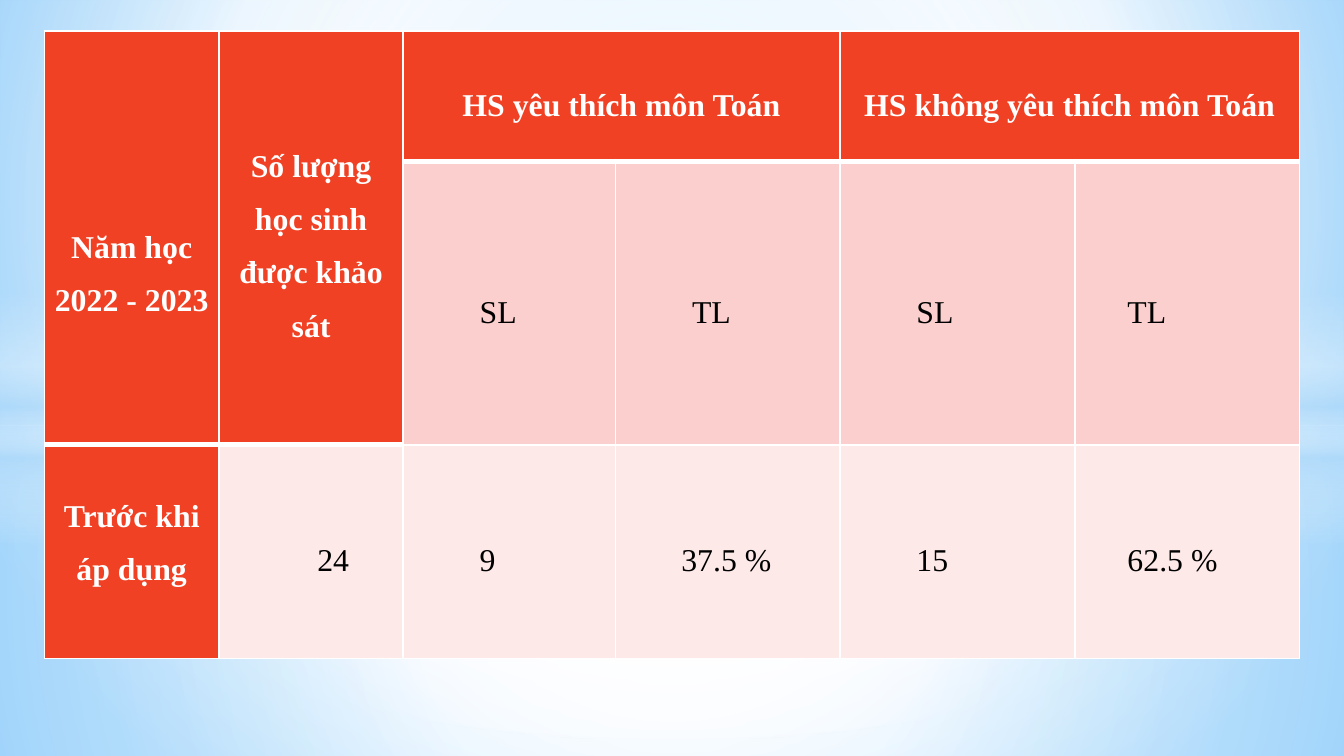
from dataclasses import dataclass

from pptx import Presentation
from pptx.dml.color import RGBColor
from pptx.enum.shapes import MSO_SHAPE
from pptx.enum.text import MSO_ANCHOR, PP_ALIGN
from pptx.oxml import parse_xml
from pptx.oxml.ns import nsdecls, qn
from pptx.util import Inches, Pt


@dataclass(frozen=True)
class Theme:
    font: str = "Times New Roman"
    size: float = 17
    line_spacing: float = 1.5
    header: str = "F14124"
    subheader: str = "FACFCD"
    body: str = "FCE9E8"
    white: str = "FFFFFF"
    black: str = "000000"
    sky: str = "9ED5FF"
    deep_sky: str = "5BB9FF"
    mist: str = "B4DCFA"
    thin: float = 1
    thick: float = 3


@dataclass(frozen=True)
class CellText:
    lines: tuple
    align: PP_ALIGN = PP_ALIGN.JUSTIFY
    indent: float = 0
    top: float = 0.01
    anchor: MSO_ANCHOR = MSO_ANCHOR.MIDDLE
    span: tuple = (1, 1)


THEME = Theme()
CENTER = PP_ALIGN.CENTER
WIDTH = 10
HEIGHT = WIDTH * 9 / 16

COLUMNS = (1.3, 1.37, 1.58, 1.67, 1.75, 1.67)
ROWS = (0.97, 2.11, 1.59)
CELLS = {
    (0, 0): CellText(("Năm học", "2022 - 2023"), CENTER, top=0.41, span=(2, 1)),
    (0, 1): CellText(("Số lượng học sinh được khảo sát",), CENTER, top=0, span=(2, 1)),
    (0, 2): CellText(("HS yêu thích môn Toán",), CENTER, span=(1, 2)),
    (0, 4): CellText(("HS không yêu thích môn Toán",), CENTER, span=(1, 2)),
    (1, 2): CellText(("SL",), indent=0.5),
    (1, 3): CellText(("TL",), indent=0.5),
    (1, 4): CellText(("SL",), indent=0.5),
    (1, 5): CellText(("TL",), indent=0.32),
    (2, 0): CellText(("Trước khi áp dụng",), CENTER, top=0.27, anchor=MSO_ANCHOR.TOP),
    (2, 1): CellText(("24",), CENTER, indent=0.33, top=0),
    (2, 2): CellText(("9",), indent=0.5),
    (2, 3): CellText(("37.5 %",), indent=0.42),
    (2, 4): CellText(("15",), indent=0.5),
    (2, 5): CellText(("62.5 %",), PP_ALIGN.LEFT, indent=0.32),
}


def gradient(stops, focus=None):
    """Gradient of (position, colour, opacity) stops: circular round focus, else vertical."""
    gs = "".join(
        f'<a:gs pos="{pos * 1000}"><a:srgbClr val="{color}">'
        f'<a:alpha val="{alpha * 1000}"/></a:srgbClr></a:gs>'
        for pos, color, alpha in stops
    )
    if focus:
        sides = " ".join(f'{k}="{v * 1000}"' for k, v in zip("ltrb", focus))
        shade = f'<a:path path="circle"><a:fillToRect {sides}/></a:path>'
    else:
        shade = '<a:lin ang="5400000" scaled="0"/>'
    return parse_xml(
        f'<a:gradFill {nsdecls("a")} rotWithShape="1"><a:gsLst>{gs}</a:gsLst>{shade}</a:gradFill>'
    )


def add_glow(s, box, stops, focus=None, shape=MSO_SHAPE.RECTANGLE):
    sp = s.shapes.add_shape(shape, *map(Inches, box))
    sp.shadow.inherit = False
    sp.line.fill.background()
    sp.fill.background()
    props = sp.element.spPr
    props.replace(props.find(qn("a:noFill")), gradient(stops, focus))


def add_backdrop(s, box):
    left, top, width, height = box
    white, mist = THEME.white, THEME.mist
    middle = (50, 50, 50, 50)

    s.background.fill.solid()
    bg = s.element.find(".//" + qn("p:bgPr"))
    bg.replace(
        bg.find(qn("a:solidFill")),
        gradient([(0, THEME.sky, 100), (60, white, 100), (100, THEME.deep_sky, 100)],
                 (20, 10, 20, 60)),
    )
    horizon = 3.17
    add_glow(s, (left, top + horizon, width, height - horizon),
             [(0, white, 91), (37, white, 76), (100, mist, 79)], middle)
    add_glow(s, (left, top, width, horizon),
             [(0, white, 89), (48, white, 62), (100, mist, 79)], middle)
    add_glow(s, (left, top + 2.18, width, 1.88),
             [(0, white, 0), (29, white, 30), (45, mist, 40),
              (55, white, 26), (65, mist, 60), (100, white, 0)])
    add_glow(s, (left, top + 1.31, width, 4.19),
             [(0, white, 100), (54, white, 0)], middle, MSO_SHAPE.OVAL)


def set_borders(cell, top, bottom):
    widths = {"L": THEME.thin, "R": THEME.thin, "T": top, "B": bottom}
    props = cell._tc.get_or_add_tcPr()
    for i, (side, width) in enumerate(widths.items()):
        props.insert(i, parse_xml(
            f'<a:ln{side} {nsdecls("a")} w="{Pt(width)}"><a:solidFill>'
            f'<a:srgbClr val="{THEME.white}"/></a:solidFill></a:ln{side}>'
        ))


def write_cell(cell, text, color, bold):
    cell.vertical_anchor = text.anchor
    cell.margin_left = cell.margin_right = Inches(0.07)
    cell.margin_top, cell.margin_bottom = Inches(text.top), 0
    tf = cell.text_frame
    for i, line in enumerate(text.lines):
        p = tf.add_paragraph() if i else tf.paragraphs[0]
        p.alignment = text.align
        p.line_spacing = THEME.line_spacing
        if text.indent:
            props = p._p.get_or_add_pPr()
            props.set("marL", "0")
            props.set("indent", str(Inches(text.indent)))
        r = p.add_run()
        r.text = line
        r.font.name = THEME.font
        r.font.size = Pt(THEME.size)
        r.font.bold = bold
        r.font.color.rgb = RGBColor.from_string(color)


def is_header(row, col):
    return row == 0 or col == 0 or (row, col) == (1, 1)


def add_survey_table(s, box):
    table = s.shapes.add_table(len(ROWS), len(COLUMNS), *map(Inches, box)).table
    table.first_row = table.horz_banding = False
    for column, width in zip(table.columns, COLUMNS):
        column.width = Inches(width)
    for row, height in zip(table.rows, ROWS):
        row.height = Inches(height)

    for r in range(len(ROWS)):
        for c in range(len(COLUMNS)):
            cell = table.cell(r, c)
            header = is_header(r, c)
            fill = THEME.header if header else (THEME.subheader, THEME.body)[r - 1]
            cell.fill.solid()
            cell.fill.fore_color.rgb = RGBColor.from_string(fill)
            header_end = 1 if c < 2 else 0
            set_borders(cell,
                        THEME.thick if r == header_end + 1 else THEME.thin,
                        THEME.thick if r <= header_end else THEME.thin)
            text = CELLS.get((r, c))
            if text:
                write_cell(cell, text, THEME.white if header else THEME.black, header)
                rows, cols = text.span
                if rows * cols > 1:
                    cell.merge(table.cell(r + rows - 1, c + cols - 1))


def main():
    prs = Presentation()
    prs.slide_width, prs.slide_height = Inches(WIDTH), Inches(HEIGHT)
    s = prs.slides.add_slide(prs.slide_layouts[6])
    add_backdrop(s, (0, 0, WIDTH, HEIGHT))
    add_survey_table(s, (0.33, 0.23, sum(COLUMNS), sum(ROWS)))
    prs.save("out.pptx")


if __name__ == "__main__":
    main()
